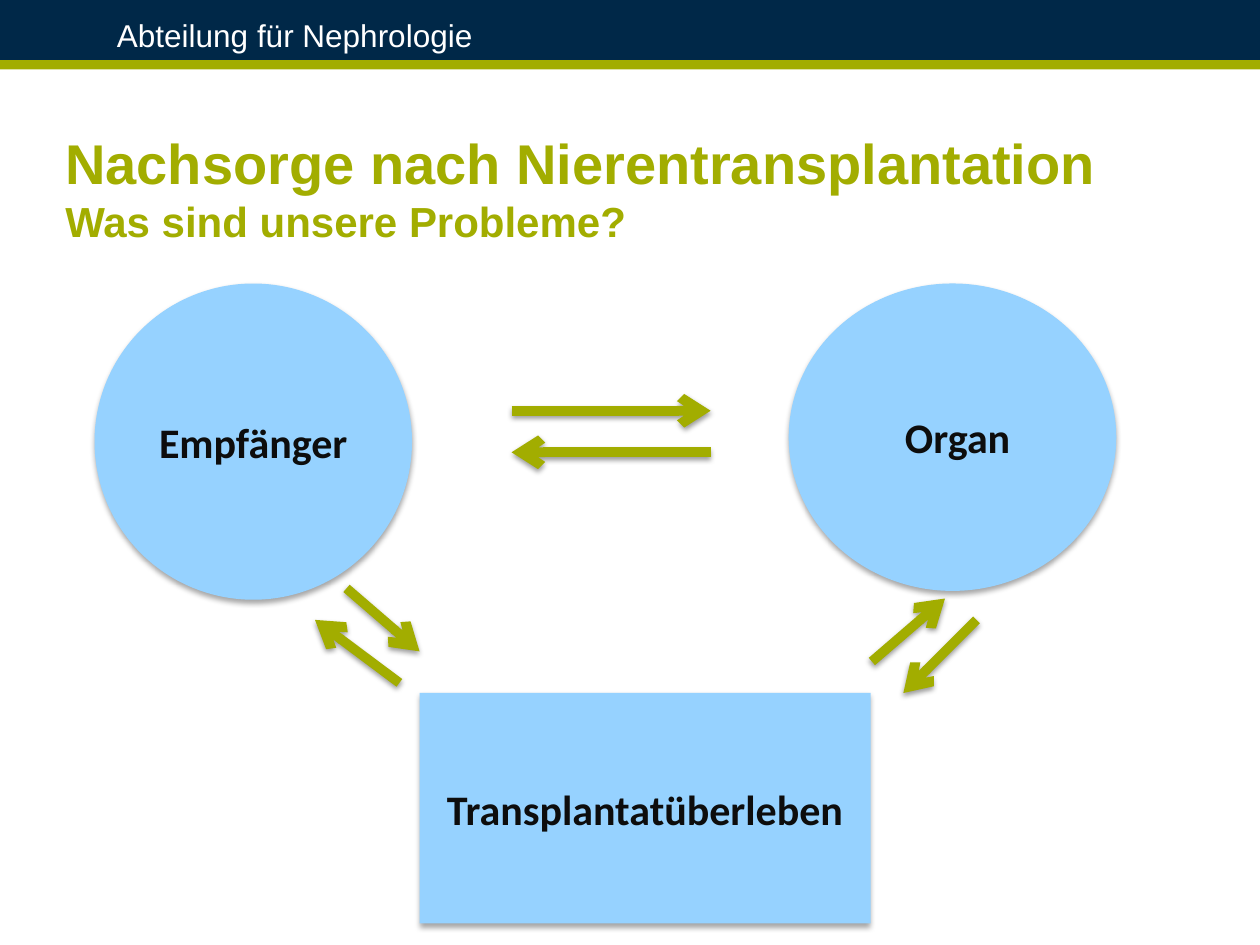
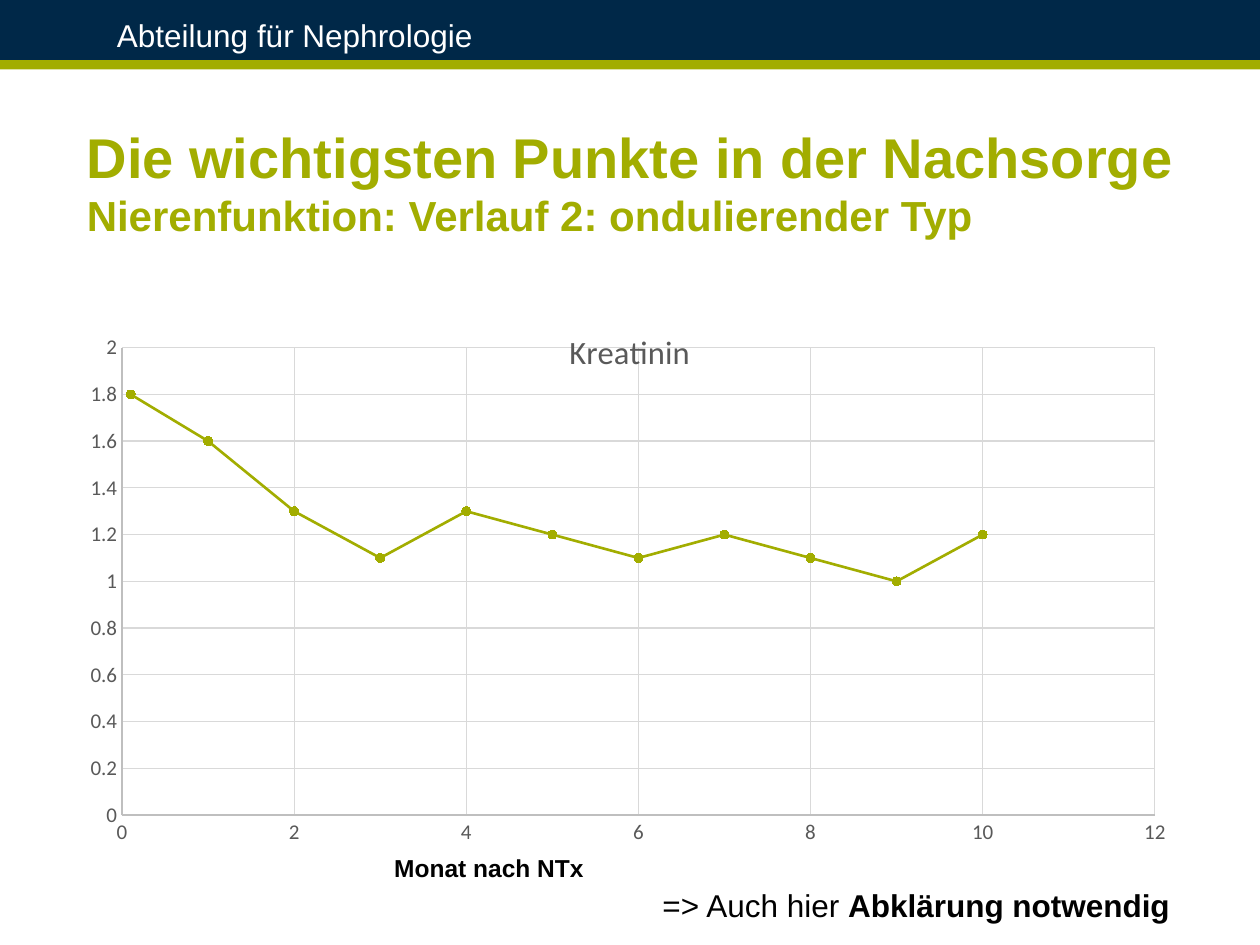
from typing import NamedTuple

from pptx import Presentation
from pptx.chart.data import XyChartData
from pptx.dml.color import RGBColor
from pptx.enum.chart import XL_CHART_TYPE, XL_MARKER_STYLE, XL_TICK_MARK
from pptx.enum.shapes import MSO_CONNECTOR, MSO_SHAPE
from pptx.enum.text import MSO_ANCHOR, PP_ALIGN
from pptx.oxml import parse_xml
from pptx.oxml.ns import nsdecls
from pptx.util import Inches, Pt

NAVY = RGBColor(0x00, 0x28, 0x48)
GREEN = RGBColor(0xA2, 0xAD, 0x00)
WHITE = RGBColor(0xFF, 0xFF, 0xFF)
BLACK = RGBColor(0x00, 0x00, 0x00)
SKY = RGBColor(0x96, 0xD2, 0xFF)
INK = RGBColor(0x0D, 0x0D, 0x0D)
AXIS_TEXT = RGBColor(0x59, 0x59, 0x59)
AXIS_LINE = RGBColor(0xBF, 0xBF, 0xBF)
GRID_LINE = RGBColor(0xD9, 0xD9, 0xD9)


class Box(NamedTuple):
    """Left, top, width and height in inches."""
    left: float
    top: float
    width: float
    height: float

    def lengths(self) -> list:
        """Return the four values as lengths."""
        return [Inches(v) for v in self]


class Run(NamedTuple):
    """A stretch of text in one style."""
    text: str
    size: float
    color: RGBColor = BLACK
    bold: bool = False
    font: str = "Arial"


class Node(NamedTuple):
    """A labelled shape of the diagram."""
    text: str
    kind: MSO_SHAPE
    box: Box
    left_inset: float = 0.1


class Arrow(NamedTuple):
    """Start and end point of an arrow in inches."""
    x1: float
    y1: float
    x2: float
    y2: float


NODES = [
    Node("Organ", MSO_SHAPE.OVAL, Box(6.26, 2.25, 2.6, 2.44), 0.18),
    Node("Empfänger", MSO_SHAPE.OVAL, Box(0.75, 2.25, 2.52, 2.51)),
    Node("Transplantatüberleben", MSO_SHAPE.RECTANGLE, Box(3.33, 5.5, 3.58, 1.83)),
]
ARROWS = [
    Arrow(4.06, 3.26, 5.64, 3.26),
    Arrow(5.64, 3.59, 4.06, 3.59),
    Arrow(6.92, 5.25, 7.5, 4.75),
    Arrow(7.75, 4.92, 7.17, 5.5),
    Arrow(3.17, 5.42, 2.5, 4.92),
    Arrow(2.75, 4.67, 3.33, 5.17),
]
MONTHS = [0.1, 1, 2, 3, 4, 5, 6, 7, 8, 9, 10]
CREATININE = [1.8, 1.6, 1.3, 1.1, 1.3, 1.2, 1.1, 1.2, 1.1, 1, 1.2]


def add_run(p, run: Run) -> None:
    """Append a styled run to a paragraph."""
    r = p.add_run()
    r.text = run.text
    r.font.name = run.font
    r.font.size = Pt(run.size)
    r.font.bold = run.bold
    r.font.color.rgb = run.color


def add_text(s, box: Box, lines: list[list[Run]], wrap: bool = False):
    """Add a text box with one paragraph per line and return its frame."""
    tf = s.shapes.add_textbox(*box.lengths()).text_frame
    tf.word_wrap = wrap
    for i, line in enumerate(lines):
        p = tf.add_paragraph() if i else tf.paragraphs[0]
        for run in line:
            add_run(p, run)
    return tf


def add_title(s, box: Box, title: str, subtitle: str, wrap: bool = False):
    """Add the green title with its subtitle and return the frame."""
    lines = [[Run(title, 32, GREEN, True)], [Run(subtitle, 24, GREEN, True)]]
    return add_text(s, box, lines, wrap)


def add_panel(s, kind: MSO_SHAPE, box: Box, fill: RGBColor):
    """Add a filled shape without outline or shadow."""
    sp = s.shapes.add_shape(kind, *box.lengths())
    sp.shadow.inherit = False
    sp.fill.solid()
    sp.fill.fore_color.rgb = fill
    sp.line.fill.background()
    return sp


def add_line(s, arrow: Arrow, width: float):
    """Add a straight green line."""
    ends = [Inches(v) for v in arrow]
    cn = s.shapes.add_connector(MSO_CONNECTOR.STRAIGHT, *ends)
    cn.line.color.rgb = GREEN
    cn.line.width = Pt(width)
    cn.element.spPr.append(parse_xml(f"<a:effectLst {nsdecls('a')}/>"))
    return cn


def cast_shadow(sp, alpha: int, distance: float) -> None:
    """Put a soft downward shadow into the effect list of a shape."""
    effects = sp.element.spPr.xpath("./a:effectLst")[0]
    effects.append(parse_xml(
        f'<a:outerShdw {nsdecls("a")} blurRad="{Pt(3.1)}" dist="{Pt(distance)}" '
        f'dir="5400000" rotWithShape="0"><a:srgbClr val="000000">'
        f'<a:alpha val="{alpha * 1000}"/></a:srgbClr></a:outerShdw>'))


def add_node(s, node: Node) -> None:
    """Draw a labelled shape of the diagram."""
    sp = add_panel(s, node.kind, node.box, SKY)
    cast_shadow(sp, 35, 1.8)
    tf = sp.text_frame
    tf.word_wrap = True
    tf.vertical_anchor = MSO_ANCHOR.MIDDLE
    tf.margin_left = Inches(node.left_inset)
    p = tf.paragraphs[0]
    p.alignment = PP_ALIGN.CENTER
    add_run(p, Run(node.text, 24, INK, True, "Calibri"))


def add_arrow(s, arrow: Arrow) -> None:
    """Draw a thick arrow with a shadow."""
    cn = add_line(s, arrow, 5.5)
    ln = cn.element.spPr.get_or_add_ln()
    ln.append(parse_xml(f'<a:tailEnd {nsdecls("a")} type="arrow"/>'))
    cast_shadow(cn, 38, 1.6)


def add_base_slide(prs):
    """Add a blank slide with the department header."""
    s = prs.slides.add_slide(prs.slide_layouts[6])
    add_panel(s, MSO_SHAPE.RECTANGLE, Box(0, 0, 10, 7.5), NAVY)
    add_line(s, Arrow(0, 0.52, 10, 0.52), 6)
    add_panel(s, MSO_SHAPE.RECTANGLE, Box(0, 0.55, 10, 6.95), WHITE)
    add_text(s, Box(0.83, 0.08, 6.59, 0.25),
             [[Run("Abteilung für Nephrologie", 18, WHITE)]], True)
    return s


def manual_layout(**values):
    """Build a manual chart layout from its values in order."""
    items = "".join(f'<c:{k} val="{v}"/>' for k, v in values.items())
    return parse_xml(f"<c:layout {nsdecls('c')}><c:manualLayout>{items}"
                     "</c:manualLayout></c:layout>")


def set_layout(parent, layout, index: int) -> None:
    """Replace the layout of a chart part."""
    for old in parent.xpath("./c:layout"):
        parent.remove(old)
    parent.insert(index, layout)


def style_axis(axis, maximum: float, step: float) -> None:
    """Set scale, grid and text of an axis."""
    axis.minimum_scale = 0
    axis.maximum_scale = maximum
    axis.major_unit = step
    axis.major_tick_mark = axis.minor_tick_mark = XL_TICK_MARK.NONE
    axis.has_major_gridlines = True
    for fmt, color in ((axis.format, AXIS_LINE),
                       (axis.major_gridlines.format, GRID_LINE)):
        fmt.line.color.rgb = color
        fmt.line.width = Pt(0.75)
    font = axis.tick_labels.font
    font.name = "Calibri"
    font.size = Pt(12)
    font.color.rgb = AXIS_TEXT


def add_creatinine_chart(s, box: Box) -> None:
    """Draw the smoothed creatinine curve."""
    data = XyChartData()
    points = data.add_series("Kreatinin")
    for month, value in zip(MONTHS, CREATININE):
        points.add_data_point(month, value)
    chart = s.shapes.add_chart(
        XL_CHART_TYPE.XY_SCATTER_SMOOTH, *box.lengths(), data).chart
    chart.has_legend = False
    chart.font.name = "Calibri"
    chart.font.size = Pt(10)
    chart.font.color.rgb = BLACK
    chart.has_title = True
    title = chart.chart_title
    add_run(title.text_frame.paragraphs[0],
            Run("Kreatinin", 18.6, AXIS_TEXT, font="Calibri"))
    set_layout(title.element,
               manual_layout(xMode="edge", yMode="edge", x=0.44, y=0.05), 1)
    set_layout(chart.element.xpath("./c:chart/c:plotArea")[0],
               manual_layout(layoutTarget="inner", xMode="edge", yMode="edge",
                             x=0.046, y=0.091, w=0.922, h=0.786), 0)
    style_axis(chart.category_axis, 12, 2)
    style_axis(chart.value_axis, 2, 0.2)
    plot = chart.plots[0]
    plot.vary_by_categories = False
    series = plot.series[0]
    series.smooth = True
    series.format.line.color.rgb = GREEN
    series.format.line.width = Pt(1.5)
    marker = series.marker
    marker.style = XL_MARKER_STYLE.CIRCLE
    marker.size = 5
    marker.format.fill.solid()
    marker.format.fill.fore_color.rgb = GREEN
    marker.format.line.color.rgb = GREEN


def build_problems(prs) -> None:
    """Build the slide on recipient, organ and graft survival."""
    s = add_base_slide(prs)
    for node in NODES:
        add_node(s, node)
    for arrow in ARROWS:
        add_arrow(s, arrow)
    tf = add_title(s, Box(0.42, 1.25, 10, 0.92),
                   "Nachsorge nach Nierentransplantation",
                   "Was sind unsere Probleme?", True)
    tf.vertical_anchor = MSO_ANCHOR.MIDDLE
    tf.margin_bottom = Inches(0.5)


def build_course(prs) -> None:
    """Build the slide on the course of kidney function."""
    s = add_base_slide(prs)
    add_title(s, Box(0.59, 0.92, 8.89, 1.85),
              "Die wichtigsten Punkte in der Nachsorge",
              "Nierenfunktion: Verlauf 2: ondulierender Typ")
    add_creatinine_chart(s, Box(0.56, 2.33, 8.89, 4.72))
    add_text(s, Box(5.16, 6.98, 4.27, 0.4),
             [[Run("=> Auch hier ", 18), Run("Abklärung notwendig", 18, bold=True)]])
    add_text(s, Box(3.03, 6.72, 1.71, 0.34), [[Run("Monat nach NTx", 14, bold=True)]])


def main() -> None:
    """Build and save the presentation."""
    prs = Presentation()
    prs.slide_width = Inches(10)
    prs.slide_height = Inches(7.5)
    build_problems(prs)
    build_course(prs)
    prs.save("out.pptx")


if __name__ == "__main__":
    main()
